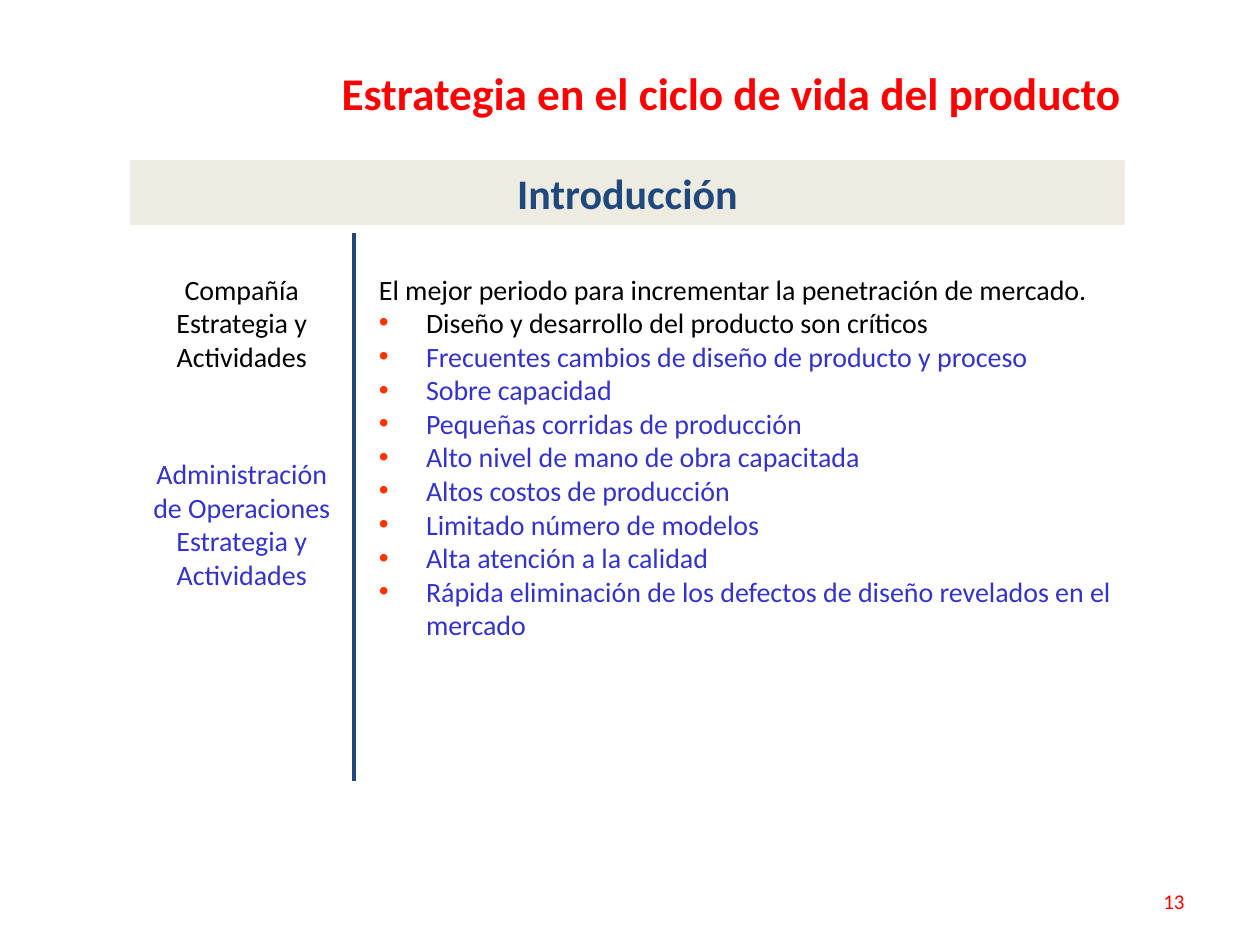
from lxml.etree import SubElement
from pptx import Presentation
from pptx.dml.color import RGBColor as RGB
from pptx.enum.shapes import MSO_CONNECTOR as Link, MSO_SHAPE as Shape
from pptx.enum.text import MSO_ANCHOR as Anchor, PP_ALIGN as Align
from pptx.oxml.ns import qn
from pptx.util import Cm, Pt

HUES = {"red": "FF0000", "navy": "1F497D", "sand": "EEECE1",
        "black": "000000", "blue": "3333CC", "dot": "FF3300"}
BASE = {"name": "Calibri", "size": Pt(16), "bold": False}
TITLE = {"size": Pt(25.9), "bold": True}
HEADING = {"size": Pt(24), "bold": True}
SMALL = {"size": Pt(12)}
LABELS = [("Compañía Estrategia y Actividades", "black"),
          ("Administración de Operaciones Estrategia y Actividades", "blue")]
LEAD = "El mejor periodo para incrementar la penetración de mercado."
POINTS = [
    ("Diseño y desarrollo del producto son críticos", "black"),
    ("Frecuentes cambios de diseño de producto y proceso", "blue"),
    ("Sobre capacidad", "blue"),
    ("Pequeñas corridas de producción", "blue"),
    ("Alto nivel de mano de obra capacitada", "blue"),
    ("Altos costos de producción", "blue"),
    ("Limitado número de modelos", "blue"),
    ("Alta atención a la calidad", "blue"),
    ("Rápida eliminación de los defectos de diseño revelados en el mercado",
     "blue"),
]


def tint(name):
    """Return the named colour."""
    return RGB.from_string(HUES[name])


def hang(para, dot):
    """Give a paragraph a hanging indent and, if asked, a bullet."""
    props = para._p.get_or_add_pPr()
    props.set("marL", str(Cm(0.95)))
    props.set("indent", str(-Cm(0.95)))
    if dot:
        hue = SubElement(props, qn("a:buClr"))
        SubElement(hue, qn("a:srgbClr"), val=HUES["dot"])
        SubElement(props, qn("a:buFont"), typeface="Arial")
        SubElement(props, qn("a:buChar"), char="•")


def write(para, text, hue, align=Align.CENTER, form=None):
    """Fill a paragraph with one formatted run."""
    para.alignment = align
    run = para.add_run()
    run.text = text
    for key, value in {**BASE, **(form or {})}.items():
        setattr(run.font, key, value)
    run.font.color.rgb = tint(hue)


def frame(slide, box, anchor=Anchor.TOP):
    """Add a wrapping text box and return its text frame."""
    area = slide.shapes.add_textbox(*map(Cm, box)).text_frame
    area.word_wrap = True
    area.vertical_anchor = anchor
    return area


def line(slide, box, text, align, form):
    """Place one red line of text in the middle of the box."""
    area = frame(slide, box, Anchor.MIDDLE)
    write(area.paragraphs[0], text, "red", align, form)


def band(slide, box, text):
    """Draw the filled band with its stage name."""
    bar = slide.shapes.add_shape(Shape.RECTANGLE, *map(Cm, box))
    bar.shadow.inherit = False
    bar.fill.solid()
    bar.fill.fore_color.rgb = bar.line.color.rgb = tint("sand")
    bar.line.width = Pt(1)
    write(bar.text_frame.paragraphs[0], text, "navy", form=HEADING)


def rule(slide, x, top, end):
    """Draw the upright line between the columns."""
    bar = slide.shapes.add_connector(
        Link.STRAIGHT, Cm(x), Cm(top), Cm(x), Cm(end))
    bar.line.color.rgb = tint("navy")
    bar.line.width = Pt(2.25)
    SubElement(bar._element.spPr, qn("a:effectLst"))


def labels(slide, box):
    """Stack the centred labels of the left column."""
    area = frame(slide, box)
    for i, (text, hue) in enumerate(LABELS):
        para = area.add_paragraph() if i else area.paragraphs[0]
        if i:
            para.space_before = Pt(48)
        write(para, text, hue)


def points(slide, box):
    """List the lead sentence and its bullets."""
    area = frame(slide, box)
    for i, (text, hue) in enumerate([(LEAD, "black"), *POINTS]):
        para = area.add_paragraph() if i else area.paragraphs[0]
        hang(para, i > 0)
        write(para, text, hue, Align.LEFT)


def stage(slide, box):
    """Lay out the band, the divider and both columns in the box."""
    x, y, wide, high = box
    side, drop = 4.5, 2.11
    band(slide, (x, y, wide, 1.27), "Introducción")
    rule(slide, x + side, y + 1.45, y + 12.5)
    labels(slide, (x - 0.05, y + drop, side + 0.07, 8.84))
    points(slide, (x + side + 0.25, y + drop, wide - side - 0.08, high - drop))


def main():
    """Build and save the slide."""
    deck = Presentation()
    deck.slide_width, deck.slide_height = Cm(25.4), Cm(19.05)
    slide = deck.slides.add_slide(deck.slide_layouts[6])
    line(slide, (6.35, 0.99, 16.79, 1.73),
         "Estrategia en el ciclo de vida del producto", Align.CENTER, TITLE)
    stage(slide, (2.64, 3.25, 20.02, 13.41))
    line(slide, (18.21, 17.65, 5.92, 1.02), "13", Align.RIGHT, SMALL)
    deck.save("out.pptx")


if __name__ == "__main__":
    main()
